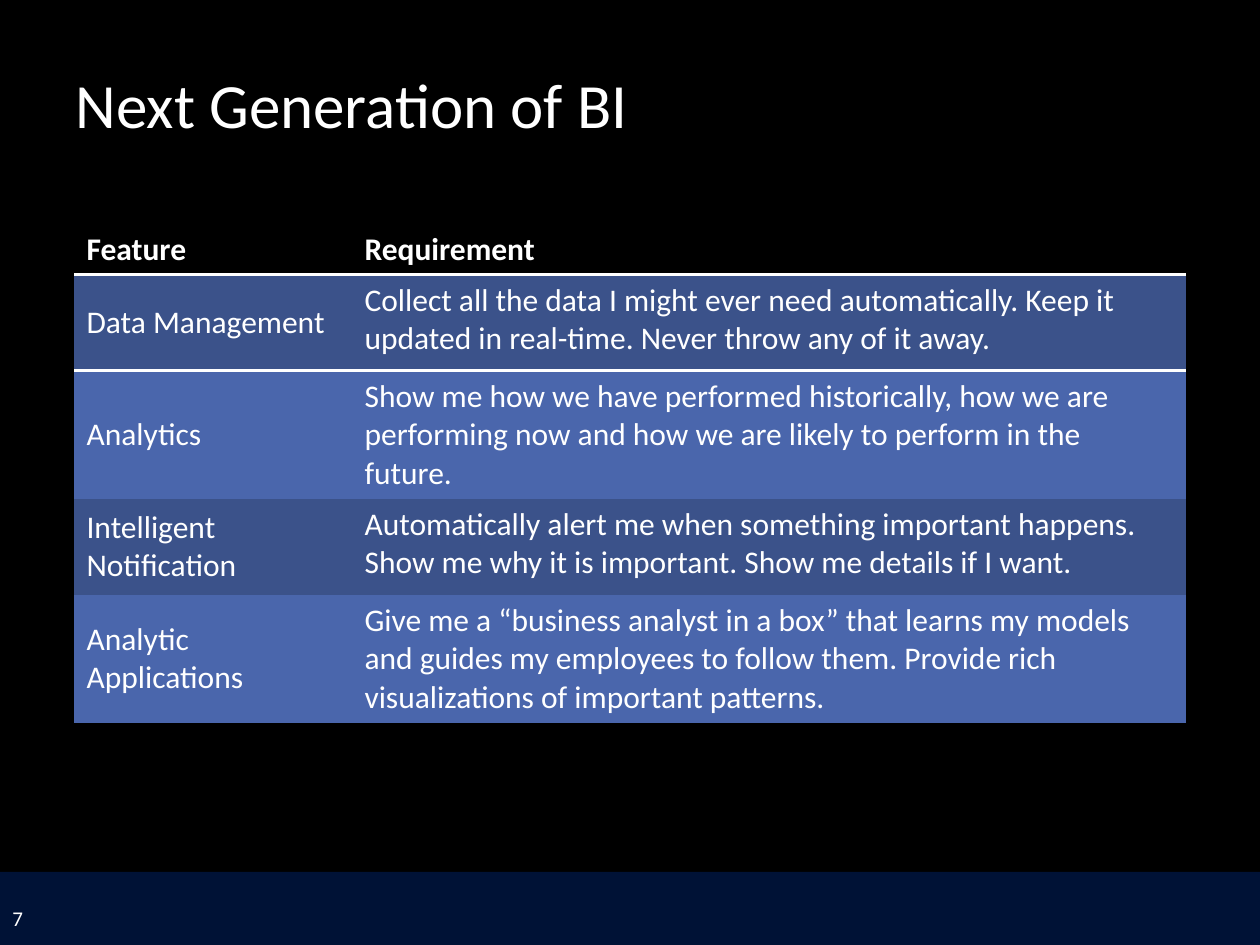
from dataclasses import dataclass
from lxml.etree import SubElement
from pptx import Presentation
from pptx.dml.color import RGBColor
from pptx.enum.shapes import MSO_SHAPE
from pptx.enum.text import MSO_ANCHOR, PP_ALIGN
from pptx.oxml.ns import qn
from pptx.util import Emu, Pt


@dataclass(frozen=True)
class Theme:
    font: str = "Calibri"
    back: str = "000000"
    text: str = "FFFFFF"
    foot: str = "001236"
    bands: tuple = ("3B528A", "4A66AC")
    title: int = 36
    body: int = 18
    page: int = 12
    rule: int = 2


THEME = Theme()
PLAIN = "{2D5ABB26-0587-4C30-8999-92F81FD0307C}"
ROWS = [
    ("Feature", "Requirement"),
    ("Data Management",
     "Collect all the data I might ever need automatically. "
     "Keep it updated in real-time. Never throw any of it away."),
    ("Analytics",
     "Show me how we have performed historically, how we are performing now "
     "and how we are likely to perform in the future."),
    ("Intelligent Notification",
     "Automatically alert me when something important happens. "
     "Show me why it is important. Show me details if I want."),
    ("Analytic Applications",
     "Give me a “business analyst in a box” that learns my models and guides "
     "my employees to follow them. Provide rich visualizations of important patterns."),
]


def px(count):
    return Emu(round(count * 914400 / 126))


def paint(fill, color):
    fill.solid()
    fill.fore_color.rgb = RGBColor.from_string(color)


def write(frame, text, size, bold=False):
    frame.text = text
    frame.word_wrap = True
    for para in frame.paragraphs:
        para.alignment = PP_ALIGN.LEFT
        for run in para.runs:
            font = run.font
            font.name = THEME.font
            font.size = Pt(size)
            font.bold = bold
            font.color.rgb = RGBColor.from_string(THEME.text)


def rule(cell, side):
    line = SubElement(cell._tc.get_or_add_tcPr(), qn(f"a:{side}"),
                      w=str(Pt(THEME.rule)))
    fill = SubElement(line, qn("a:solidFill"))
    SubElement(fill, qn("a:srgbClr"), val=THEME.text)


def add_title(slide, box, text):
    title = slide.shapes.title
    title.left, title.top, title.width, title.height = map(px, box)
    write(title.text_frame, text, THEME.title)
    title.text_frame.vertical_anchor = MSO_ANCHOR.MIDDLE


def add_grid(slide, box, rows, heights):
    left, top, width, height = box
    frame = slide.shapes.add_table(len(rows), 2, *map(px, box))
    table = frame.table
    table._tbl.tblPr.find(qn("a:tableStyleId")).text = PLAIN
    first = width // 4
    for col, span in zip(table.columns, (first, width - first)):
        col.width = px(span)
    for i, (row, texts) in enumerate(zip(table.rows, rows)):
        row.height = px(heights[i])
        head = i == 0
        for j, text in enumerate(texts):
            cell = row.cells[j]
            write(cell.text_frame, text, THEME.body, head)
            if head:
                cell.vertical_anchor = MSO_ANCHOR.BOTTOM
                rule(cell, "lnB")
            else:
                cell.vertical_anchor = MSO_ANCHOR.TOP if j else MSO_ANCHOR.MIDDLE
            if i == 1:
                rule(cell, "lnT")
            paint(cell.fill, THEME.back if head else THEME.bands[(i - 1) % 2])


def add_foot(slide, box, text):
    left, top, width, height = box
    band = slide.shapes.add_shape(MSO_SHAPE.RECTANGLE, *map(px, box))
    band.shadow.inherit = False
    paint(band.fill, THEME.foot)
    band.line.fill.background()
    page = slide.shapes.add_textbox(px(left), px(top + 21), px(294), px(50))
    write(page.text_frame, text, THEME.page)
    page.text_frame.vertical_anchor = MSO_ANCHOR.MIDDLE


def main():
    deck = Presentation()
    deck.slide_width, deck.slide_height = px(1260), px(945)
    slide = deck.slides.add_slide(deck.slide_layouts[5])
    paint(slide.background.fill, THEME.back)
    add_foot(slide, (0, 872, 1260, 73), "7")
    add_title(slide, (63, 38, 1175, 130), "Next Generation of BI")
    heights = (96, 96, 128, 96, 128)
    add_grid(slide, (74, 179, 1112, sum(heights)), ROWS, heights)
    deck.save("out.pptx")


if __name__ == "__main__":
    main()
